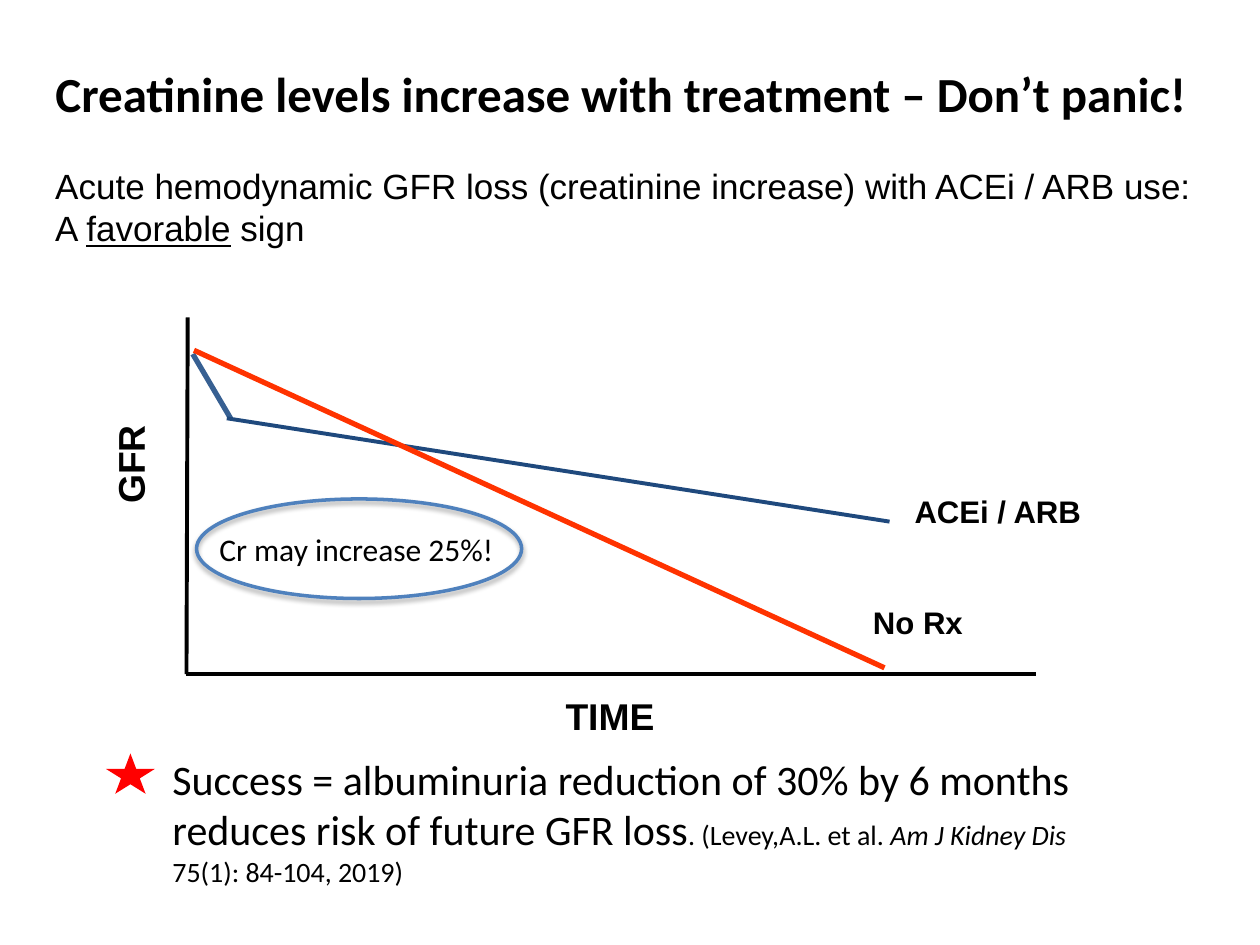
from dataclasses import dataclass, field

from lxml import etree
from pptx import Presentation
from pptx import util as u
from pptx.dml import color
from pptx.enum import shapes, text
from pptx.oxml import ns

BLACK = "000000"


@dataclass
class Span:
    words: str
    format: dict = field(default_factory=dict)


@dataclass
class Line:
    start: tuple[float, float]
    end: tuple[float, float]
    colour: str
    width: float


@dataclass
class Label:
    place: tuple[float, float, float, float]
    paras: list[list[Span]]
    font: dict
    wrap: bool = False
    rotation: int = 0
    inset: tuple[float, float] = (0.1, 0.05)


def rgb(value: str) -> color.RGBColor:
    return color.RGBColor.from_string(value)


def write_text(frame, label: Label) -> None:
    across, down = (u.Inches(gap) for gap in label.inset)
    settings = {
        "word_wrap": label.wrap,
        "auto_size": text.MSO_AUTO_SIZE.NONE,
        "vertical_anchor": text.MSO_ANCHOR.TOP,
        "margin_left": across,
        "margin_right": across,
        "margin_top": down,
        "margin_bottom": down,
    }
    for name, value in settings.items():
        setattr(frame, name, value)
    for index, spans in enumerate(label.paras):
        para = frame.add_paragraph() if index else frame.paragraphs[0]
        para.alignment = text.PP_ALIGN.LEFT
        for span in spans:
            run = para.add_run()
            run.text = span.words
            run.font.color.rgb = rgb(BLACK)
            for name, value in {**label.font, **span.format}.items():
                setattr(run.font, name, value)


def add_label(page, label: Label) -> None:
    box = page.shapes.add_textbox(*map(u.Inches, label.place))
    box.rotation = label.rotation
    write_text(box.text_frame, label)


def add_title(page, label: Label) -> None:
    title = page.shapes.title
    names = ("left", "top", "width", "height")
    for name, value in zip(names, label.place):
        setattr(title, name, u.Inches(value))
    write_text(title.text_frame, label)


def add_line(page, line: Line) -> None:
    connector = page.shapes.add_connector(
        shapes.MSO_CONNECTOR.STRAIGHT, *map(u.Inches, line.start + line.end)
    )
    connector.line.color.rgb = rgb(line.colour)
    connector.line.width = u.Pt(line.width)
    etree.SubElement(connector._element.spPr, ns.qn("a:effectLst"))


def add_ellipse(page, place: tuple, colour: str) -> None:
    ellipse = page.shapes.add_shape(shapes.MSO_SHAPE.OVAL, *map(u.Inches, place))
    ellipse.fill.background()
    ellipse.line.color.rgb = rgb(colour)
    ellipse.line.width = u.Pt(2)
    ellipse.shadow.inherit = False
    effects = ellipse._element.spPr.find(ns.qn("a:effectLst"))
    shadow = etree.SubElement(
        effects, ns.qn("a:outerShdw"), blurRad=str(u.Pt(3)), dist=str(u.Pt(1.8)),
        dir="5400000", rotWithShape="0",
    )
    shade = etree.SubElement(shadow, ns.qn("a:srgbClr"), val=BLACK)
    etree.SubElement(shade, ns.qn("a:alpha"), val="35000")


def add_star(page, place: tuple, colour: str) -> None:
    star = page.shapes.add_shape(shapes.MSO_SHAPE.STAR_5_POINT, *map(u.Inches, place))
    star.fill.solid()
    star.fill.fore_color.rgb = rgb(colour)
    star.line.fill.background()
    star.shadow.inherit = False


def font(name: str, size: float, bold: bool = False) -> dict:
    return {"name": name, "size": u.Pt(size), "bold": bold}


ORIGIN = (1.48, 5.35)
AXIS_FONT = font("Arial", 21.3, True)
SERIES_FONT = font("Arial", 17.8, True)
SMALL = {"size": u.Pt(16)}

TITLE = Label(
    (0.34, 0.45, 9.37, 0.6),
    [[Span("Creatinine levels increase with treatment – Don’t panic!")]],
    font("Calibri", 28, True), wrap=True,
)
LINES = [
    Line((1.49, 2.52), ORIGIN, BLACK, 2.25),
    Line(ORIGIN, (8.22, 5.35), BLACK, 2.25),
    Line((1.53, 2.81), (1.83, 3.32), "376092", 3),
    Line((1.8, 3.32), (7.06, 4.14), "1F497D", 2.25),
    Line((1.54, 2.78), (7.02, 5.3), "FF3300", 3),
]
LABELS = [
    Label(
        (0.34, 1.26, 9.37, 0.8),
        [[
            Span("Acute hemodynamic GFR loss (creatinine increase) with ACEi / ARB use: A "),
            Span("favorable", {"underline": True}),
            Span(" sign"),
        ]],
        font("Arial", 20), wrap=True,
    ),
    Label((4.39, 5.45, 0.92, 0.46), [[Span("TIME")]], AXIS_FONT),
    Label((0.62, 3.45, 0.83, 0.46), [[Span("GFR")]], AXIS_FONT, rotation=270),
    Label((7.16, 3.86, 1.55, 0.4), [[Span("ACEi / ARB")]], SERIES_FONT),
    Label((6.83, 4.74, 0.92, 0.4), [[Span("No Rx")]], SERIES_FONT),
    Label(
        (1.69, 4.16, 2.31, 0.4), [[Span("Cr may increase 25%!")]],
        font("Calibri", 18), inset=(0.05, 0.05),
    ),
    Label(
        (1.27, 5.93, 7.52, 1.18),
        [
            [Span("Success = albuminuria reduction of 30% by 6 months")],
            [
                Span("reduces risk of future GFR loss"),
                Span(". (Levey,A.L. et al. ", SMALL),
                Span("Am J Kidney Dis", {**SMALL, "italic": True}),
            ],
            [Span("75(1): 84-104, 2019)", SMALL)],
        ],
        font("Calibri", 24), wrap=True,
    ),
]


def main() -> None:
    deck = Presentation()
    deck.slide_width, deck.slide_height = u.Inches(10), u.Inches(7.5)
    page = deck.slides.add_slide(deck.slide_layouts.get_by_name("Title Only"))
    add_title(page, TITLE)
    for line in LINES:
        add_line(page, line)
    add_ellipse(page, (1.56, 3.96, 2.58, 0.79), "4F81BD")
    for label in LABELS:
        add_label(page, label)
    add_star(page, (0.84, 5.98, 0.39, 0.32), "FF0000")
    deck.save("out.pptx")


if __name__ == "__main__":
    main()
